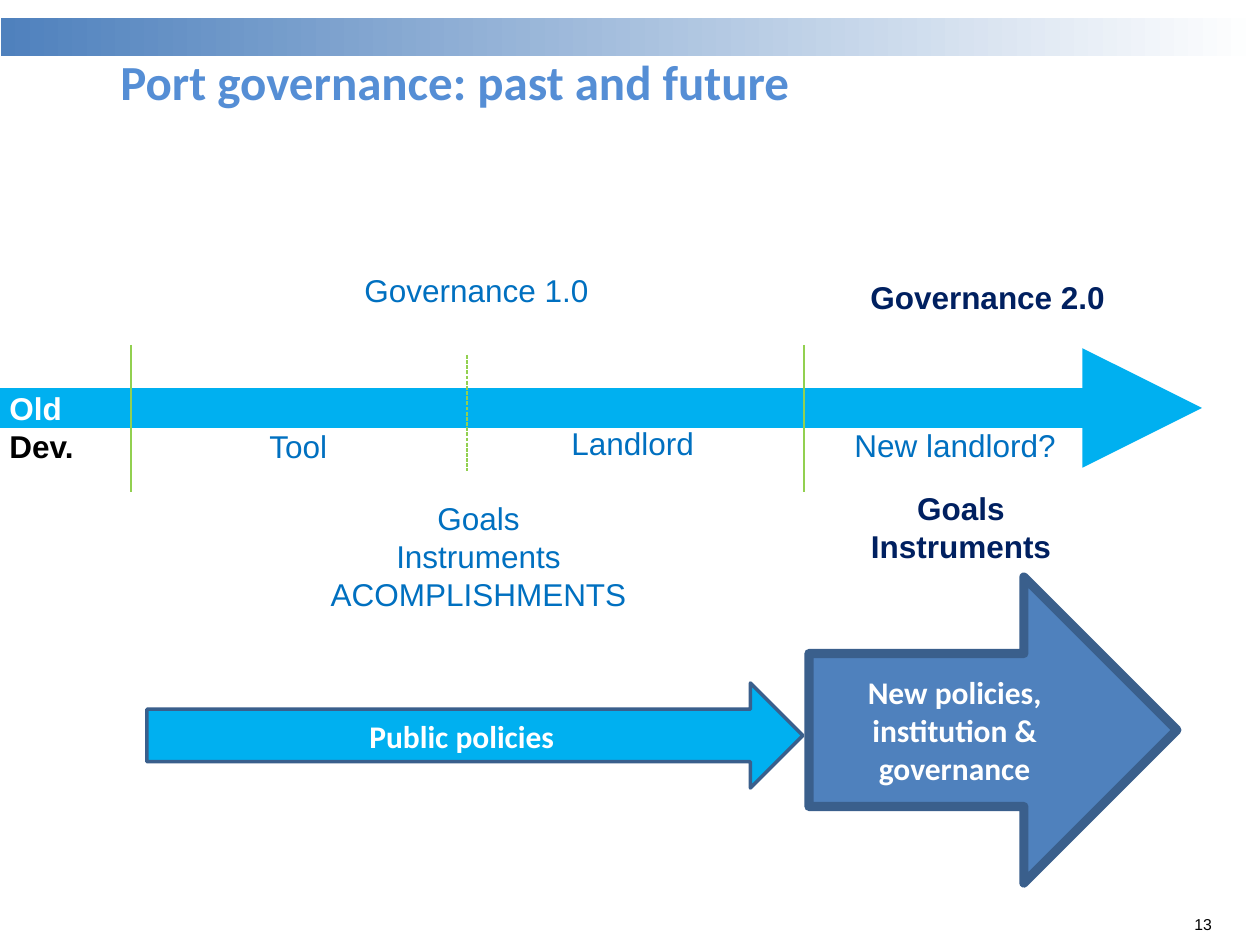
import lxml.etree
import pptx
import pptx.dml.color
import pptx.enum.dml
import pptx.enum.shapes
import pptx.enum.text
import pptx.oxml.ns
import pptx.util

RGBColor = pptx.dml.color.RGBColor
WHITE = RGBColor(0xFF, 0xFF, 0xFF)
BLACK = RGBColor(0, 0, 0)
STEEL = RGBColor(0x4F, 0x81, 0xBD)
STEEL_DARK = RGBColor(0x3A, 0x5F, 0x8C)
TITLE_BLUE = RGBColor(0x55, 0x8E, 0xD5)
SKY = RGBColor(0x00, 0xB0, 0xF0)
BLUE = RGBColor(0x00, 0x70, 0xC0)
NAVY = RGBColor(0x00, 0x20, 0x60)
GREEN = RGBColor(0x92, 0xD0, 0x50)

EMU_PER_PX = 914400 / 126
LEFT = pptx.enum.text.PP_ALIGN.LEFT
CENTER = pptx.enum.text.PP_ALIGN.CENTER
RIGHT = pptx.enum.text.PP_ALIGN.RIGHT

TITLE = ("Port governance: past and future", (108, 45, 702, 72))
SLIDE_NUMBER = ("13", (1193, 915, 19, 19))

# Text lines, box in px, colour, bold, alignment, wrap
LABELS = [
    (["Governance 1.0"], (352, 265, 253, 50), BLUE, False, LEFT, False),
    (["Governance 2.0"], (858, 272, 262, 50), NAVY, True, LEFT, False),
    (["Tool"], (257, 421, 84, 50), BLUE, False, LEFT, True),
    (["Landlord"], (559, 418, 149, 50), BLUE, False, LEFT, True),
    (["New landlord?"], (842, 420, 234, 50), BLUE, False, LEFT, True),
    (["Goals", "Instruments", "ACOMPLISHMENTS"],
     (312, 493, 333, 127), BLUE, False, CENTER, True),
    (["Goals", "Instruments"], (845, 483, 232, 127), NAVY, True, CENTER, True),
]
ERA_RUNS = [("Old ", WHITE), ("Dev.", BLACK)]
ERA_BOX = (-3, 383, 146, 89)

TIMELINE = (-5, 408, 1202, 408)
# x, top, bottom, dashed
DIVIDERS = [(131, 345, 492, False), (467, 355, 471, True), (804, 345, 492, False)]

# Text, box in px, fill, line width in points
POLICY_ARROWS = [
    ("Public policies", (147, 683, 656, 105), SKY, 2),
    ("New policies, institution & governance", (809, 577, 368, 306), STEEL, 5.25),
]


def px(*lengths):
    return [pptx.util.Emu(round(length * EMU_PER_PX)) for length in lengths]


def add_run(paragraph, text, color, size=18, font="Arial", bold=False):
    run = paragraph.add_run()
    run.text = text
    run.font.name = font
    run.font.size = pptx.util.Pt(size)
    run.font.bold = bold
    run.font.color.rgb = color


def add_text_box(slide, box, wrap=False):
    frame = slide.shapes.add_textbox(*px(*box)).text_frame
    frame.word_wrap = wrap
    return frame


def add_label(slide, lines, box, color, bold, alignment, wrap):
    frame = add_text_box(slide, box, wrap)
    for index, line in enumerate(lines):
        paragraph = frame.add_paragraph() if index else frame.paragraphs[0]
        paragraph.alignment = alignment
        add_run(paragraph, line, color, bold=bold)


def add_line(slide, ends, color, width):
    connector = slide.shapes.add_connector(
        pptx.enum.shapes.MSO_CONNECTOR.STRAIGHT, *px(*ends))
    connector.line.color.rgb = color
    connector.line.width = pptx.util.Pt(width)
    lxml.etree.SubElement(connector._element.spPr,
                          pptx.oxml.ns.qn("a:effectLst"))
    return connector


def add_timeline(slide):
    connector = add_line(slide, TIMELINE, SKY, 22.75)
    outline = connector._element.spPr.find(pptx.oxml.ns.qn("a:ln"))
    lxml.etree.SubElement(outline, pptx.oxml.ns.qn("a:tailEnd"), type="triangle")


def add_policy_arrow(slide, text, box, fill, line_width):
    arrow = slide.shapes.add_shape(
        pptx.enum.shapes.MSO_SHAPE.RIGHT_ARROW, *px(*box))
    arrow.shadow.inherit = False
    arrow.fill.solid()
    arrow.fill.fore_color.rgb = fill
    arrow.line.color.rgb = STEEL_DARK
    arrow.line.width = pptx.util.Pt(line_width)
    frame = arrow.text_frame
    frame.word_wrap = True
    frame.vertical_anchor = pptx.enum.text.MSO_ANCHOR.MIDDLE
    frame.paragraphs[0].alignment = CENTER
    add_run(frame.paragraphs[0], text, WHITE, font="Calibri", bold=True)


def add_header_band(slide):
    band = slide.shapes.add_shape(
        pptx.enum.shapes.MSO_SHAPE.RECTANGLE, *px(1, 18, 1259, 38))
    band.shadow.inherit = False
    band.line.fill.background()
    band.fill.gradient()
    band.fill.gradient_angle = 0
    for stop, color in zip(band.fill.gradient_stops, (STEEL, WHITE)):
        stop.color.rgb = color


def add_slide_number(slide):
    text, box = SLIDE_NUMBER
    frame = add_text_box(slide, box)
    frame.margin_left = frame.margin_right = 0
    frame.margin_top = frame.margin_bottom = 0
    frame.paragraphs[0].alignment = RIGHT
    add_run(frame.paragraphs[0], text, BLACK, size=9)


def main():
    presentation = pptx.Presentation()
    presentation.slide_width, presentation.slide_height = px(1260, 945)
    slide = presentation.slides.add_slide(presentation.slide_layouts[6])

    add_slide_number(slide)
    add_header_band(slide)
    title, title_box = TITLE
    add_run(add_text_box(slide, title_box).paragraphs[0], title, TITLE_BLUE,
            size=28, font="Calibri", bold=True)

    add_timeline(slide)
    for x, top, bottom, dashed in DIVIDERS:
        divider = add_line(slide, (x, top, x, bottom), GREEN, 0.75)
        if dashed:
            divider.line.dash_style = pptx.enum.dml.MSO_LINE.SQUARE_DOT

    for label in LABELS:
        add_label(slide, *label)
    era = add_text_box(slide, ERA_BOX, wrap=True).paragraphs[0]
    for text, color in ERA_RUNS:
        add_run(era, text, color, bold=True)
    for arrow in POLICY_ARROWS:
        add_policy_arrow(slide, *arrow)

    presentation.save("out.pptx")


if __name__ == "__main__":
    main()
